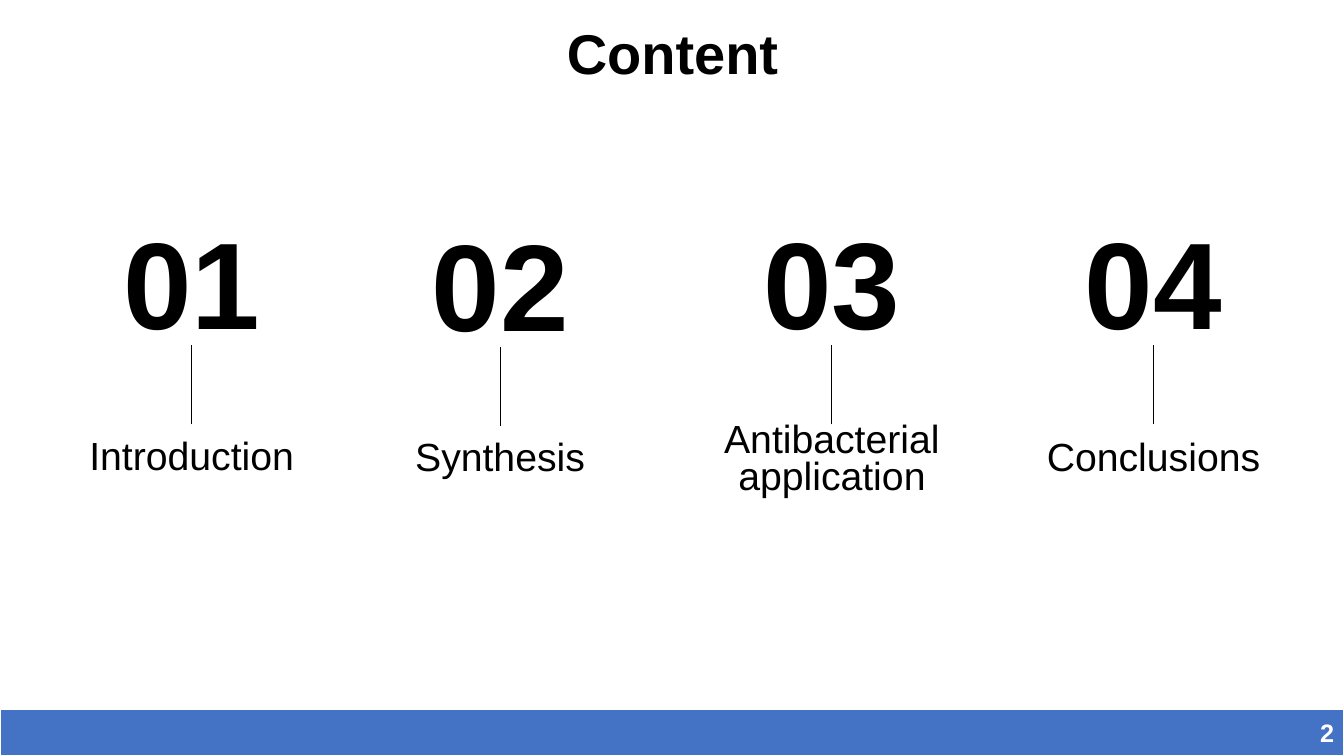
"""Build a contents slide with four numbered sections."""
from lxml import etree
from pptx import Presentation
from pptx.dml.color import RGBColor
from pptx.enum.shapes import MSO_CONNECTOR, MSO_SHAPE
from pptx.enum.text import MSO_ANCHOR, MSO_AUTO_SIZE, PP_ALIGN
from pptx.oxml.ns import qn
from pptx.util import Inches, Pt

CENTER, RIGHT = PP_ALIGN.CENTER, PP_ALIGN.RIGHT
TOP, MIDDLE = MSO_ANCHOR.TOP, MSO_ANCHOR.MIDDLE
FIT_SHAPE, NO_FIT = MSO_AUTO_SIZE.SHAPE_TO_FIT_TEXT, MSO_AUTO_SIZE.NONE
STRAIGHT, RECTANGLE = MSO_CONNECTOR.STRAIGHT, MSO_SHAPE.RECTANGLE
COLORS = {"ink": "000000", "paper": "FFFFFF", "footer": "4472C4"}


def color(name):
    return RGBColor.from_string(COLORS[name])


def write(box, text, size, bold=False, ink="ink", align=CENTER, anchor=TOP, spacing=1.0):
    frame = box.text_frame
    frame.text = text
    frame.vertical_anchor = anchor
    para = frame.paragraphs[0]
    para.alignment = align
    para.line_spacing = spacing
    span = para.runs[0]
    span.font.name = "Arial"
    span.font.size = Pt(size)
    span.font.bold = bold
    span.font.color.rgb = color(ink)


deck = Presentation()
deck.slide_width, deck.slide_height = Inches(13.33), Inches(7.5)
page = deck.slides.add_slide(deck.slide_layouts[5])

title = page.shapes.title
title.left, title.top = Inches(0.92), Inches(0.21)
title.width, title.height = Inches(11.5), Inches(0.97)
title.text_frame.auto_size = NO_FIT
write(title, "Content", 40, bold=True, spacing=0.9)

sections = [
    ("Introduction", 1.9, 2.0, 4.27, 2.55),
    ("Synthesis", 4.96, 2.02, 4.28, 2.8),
    ("Antibacterial application", 8.25, 2.0, 4.28, 2.55),
    ("Conclusions", 11.44, 2.0, 4.28, 2.55),
]
for number, (name, middle, top, label_top, width) in enumerate(sections, 1):
    label = page.shapes.add_textbox(
        Inches(middle - width / 2), Inches(label_top), Inches(width), Inches(0.58))
    frame = label.text_frame
    frame.word_wrap = True
    frame.margin_left = frame.margin_right = Inches(0.1)
    frame.margin_top = frame.margin_bottom = Inches(0.1)
    write(label, name, 28, anchor=MIDDLE, spacing=0.8)

    stem = page.shapes.add_connector(
        STRAIGHT, Inches(middle), Inches(top + 2.21), Inches(middle), Inches(top + 1.42))
    stem.line.color.rgb = color("ink")
    stem.line.width = Pt(0.5)
    etree.SubElement(stem.element.spPr, qn("a:effectLst"))

    numeral = page.shapes.add_textbox(
        Inches(middle - 0.79), Inches(top), Inches(1.58), Inches(1.58))
    numeral.text_frame.word_wrap = False
    numeral.text_frame.auto_size = FIT_SHAPE
    write(numeral, f"{number:02d}", 88, bold=True)

footer = page.shapes.add_shape(
    RECTANGLE, Inches(0), Inches(7.03), Inches(13.33), Inches(0.47))
footer.shadow.inherit = False
footer.fill.solid()
footer.fill.fore_color.rgb = color("footer")
footer.line.color.rgb = color("paper")
footer.line.width = Pt(1.5)
write(footer, "2", 18, bold=True, ink="paper", align=RIGHT, anchor=MIDDLE)

deck.save("out.pptx")
